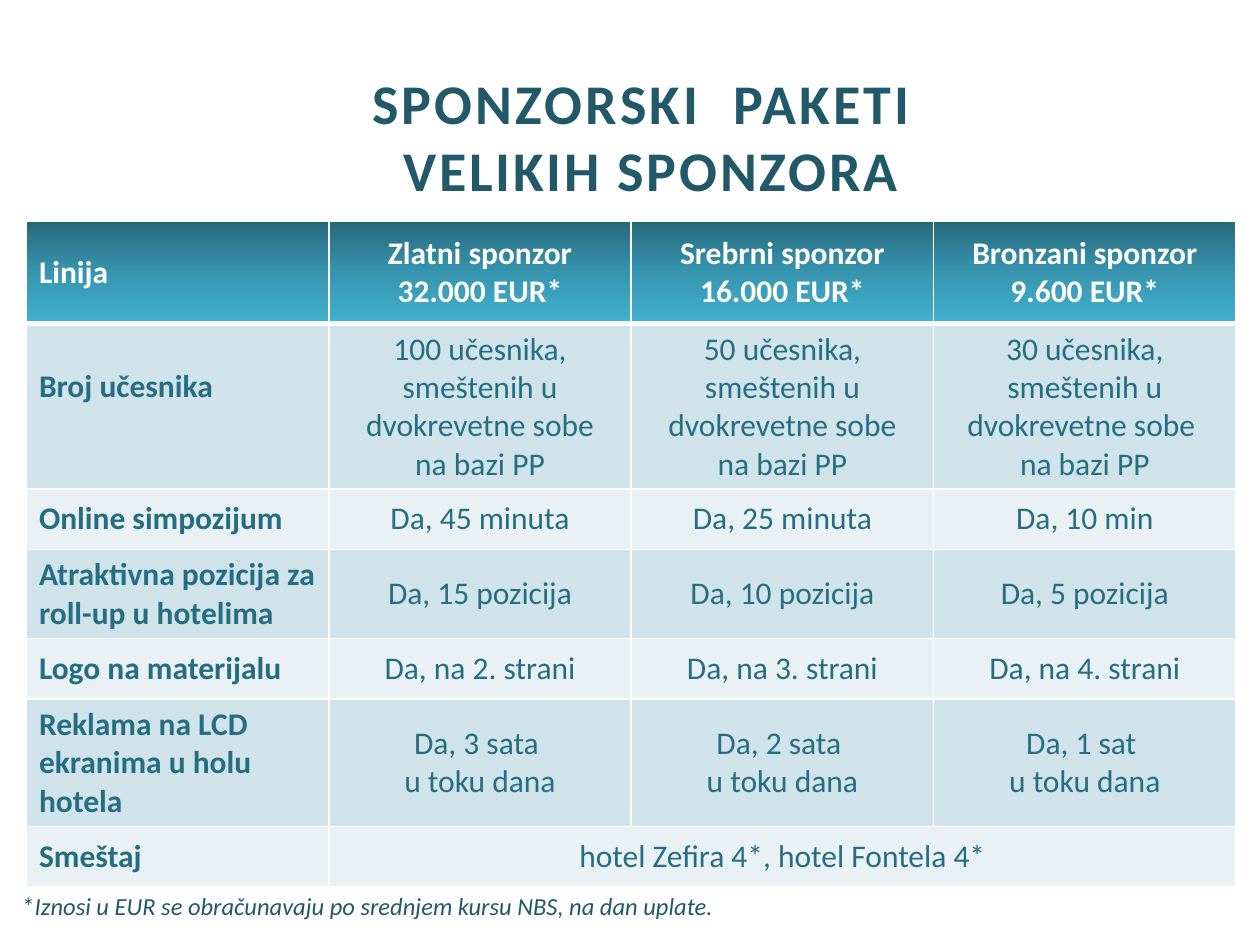
from copy import deepcopy

from lxml import etree
from pptx import Presentation
from pptx import util as u
from pptx.dml.color import RGBColor
from pptx.enum import text
from pptx.oxml.ns import qn

FONT = "Calibri"
WHITE = RGBColor(0xFF, 0xFF, 0xFF)
DARK_TEAL = RGBColor(0x21, 0x59, 0x68)
TEAL = RGBColor(0x25, 0x6E, 0x82)
BANDS = [RGBColor(0xE9, 0xF1, 0xF5), RGBColor(0xD0, 0xE3, 0xEA)]
HEADER_STOPS = [
    (0, RGBColor(0x27, 0x69, 0x7B)),
    (0.5, RGBColor(0x37, 0x95, 0xAF)),
    (1, RGBColor(0x42, 0xB1, 0xCF)),
]

COLUMN_WIDTH = 2.4
ROW_HEIGHTS = [0.81, 1.31, 0.48, 0.71, 0.48, 1.01, 0.48]
ROWS = [
    ["Linija", "Zlatni sponzor\n32.000 EUR*", "Srebrni sponzor\n16.000 EUR*",
     "Bronzani sponzor\n9.600 EUR*"],
    ["Broj učesnika",
     "100 učesnika, smeštenih u dvokrevetne sobe\nna bazi PP",
     "50 učesnika, smeštenih u dvokrevetne sobe\nna bazi PP",
     "30 učesnika, smeštenih u dvokrevetne sobe \nna bazi PP"],
    ["Online simpozijum", "Da, 45 minuta", "Da, 25 minuta", "Da, 10 min"],
    ["Atraktivna pozicija za roll-up u hotelima",
     "Da, 15 pozicija", "Da, 10 pozicija", "Da, 5 pozicija"],
    ["Logo na materijalu",
     "Da, na 2. strani", "Da, na 3. strani", "Da, na 4. strani"],
    ["Reklama na LCD ekranima u holu hotela", "Da, 3 sata \nu toku dana",
     "Da, 2 sata \nu toku dana", "Da, 1 sat \nu toku dana"],
    ["Smeštaj", "hotel Zefira 4*, hotel Fontela 4*", "", ""],
]


def format_run(span, size, color, bold=False, italic=False):
    font = span.font
    font.name, font.size = FONT, u.Pt(size)
    font.bold, font.italic = bold, italic
    font.color.rgb = color


def add_title(page):
    title = page.shapes.title
    title.left, title.top = u.Inches(1.83), u.Inches(0.5)
    title.width, title.height = u.Inches(6.67), u.Inches(1.1)
    frame = title.text_frame
    frame.margin_left = frame.margin_right = frame.margin_bottom = 0
    frame.margin_top = u.Inches(0.04)
    frame.vertical_anchor = text.MSO_ANCHOR.TOP
    frame.auto_size = text.MSO_AUTO_SIZE.SHAPE_TO_FIT_TEXT
    para = frame.paragraphs[0]
    para.text = "SPONZORSKI  PAKETI \vVELIKIH SPONZORA"
    para.alignment = text.PP_ALIGN.CENTER
    for span, spacing in zip(para.runs, (180, 160)):
        format_run(span, 32, DARK_TEAL, bold=True)
        span.font._element.set("spc", str(spacing))


def set_borders(cell, bottom_width):
    properties = cell._tc.get_or_add_tcPr()
    for side, width in (("L", 1), ("R", 1), ("T", 1), ("B", bottom_width)):
        line = etree.SubElement(properties, qn(f"a:ln{side}"), w=str(u.Pt(width)))
        fill = etree.SubElement(line, qn("a:solidFill"))
        etree.SubElement(fill, qn("a:srgbClr"), val=str(WHITE))


def fill_header(cell):
    fill = cell.fill
    fill.gradient()
    fill.gradient_angle = 270
    stop_list = cell._tc.tcPr.find(f".//{qn('a:gsLst')}")
    stop_list.append(deepcopy(stop_list[-1]))
    for stop, (position, color) in zip(fill.gradient_stops, HEADER_STOPS):
        stop.position = position
        stop.color.rgb = color


def fill_cell(cell, words, row, column):
    is_header = row == 0
    set_borders(cell, 3 if is_header else 1)
    if is_header:
        fill_header(cell)
    else:
        cell.fill.solid()
        cell.fill.fore_color.rgb = BANDS[row % 2]
    cell.vertical_anchor = text.MSO_ANCHOR.MIDDLE
    cell.text_frame.text = words
    for para in cell.text_frame.paragraphs:
        para.alignment = text.PP_ALIGN.CENTER if column else text.PP_ALIGN.LEFT
        for span in para.runs:
            format_run(span, 18, WHITE if is_header else TEAL,
                       bold=is_header or column == 0)


def add_packages(page):
    columns = len(ROWS[0])
    table = page.shapes.add_table(
        len(ROWS), columns, u.Inches(0.21), u.Inches(1.76),
        u.Inches(COLUMN_WIDTH * columns), u.Inches(sum(ROW_HEIGHTS))).table
    for column in table.columns:
        column.width = u.Inches(COLUMN_WIDTH)
    for row, height in zip(table.rows, ROW_HEIGHTS):
        row.height = u.Inches(height)
    for row, entries in enumerate(ROWS):
        for column, words in enumerate(entries):
            fill_cell(table.cell(row, column), words, row, column)
    # The participants label sits above the middle of its row
    table.cell(1, 0).margin_bottom = u.Inches(0.36)
    # One accommodation entry serves all packages
    last = len(ROWS) - 1
    table.cell(last, 1).merge(table.cell(last, columns - 1))


def add_footnote(page):
    box = page.shapes.add_textbox(
        u.Inches(0.08), u.Inches(7.02), u.Inches(5.92), u.Inches(0.34))
    frame = box.text_frame
    frame.word_wrap = False
    frame.auto_size = text.MSO_AUTO_SIZE.SHAPE_TO_FIT_TEXT
    para = frame.paragraphs[0]
    note = "Iznosi u EUR se obračunavaju po srednjem kursu NBS, na dan uplate."
    for words, italic in (("*", False), (note, True)):
        span = para.add_run()
        span.text = words
        format_run(span, 14, DARK_TEAL, italic=italic)


def main():
    deck = Presentation()
    deck.slide_width, deck.slide_height = u.Inches(10), u.Inches(7.5)
    page = deck.slides.add_slide(deck.slide_layouts[5])
    add_packages(page)
    add_title(page)
    add_footnote(page)
    deck.save("out.pptx")


if __name__ == "__main__":
    main()
